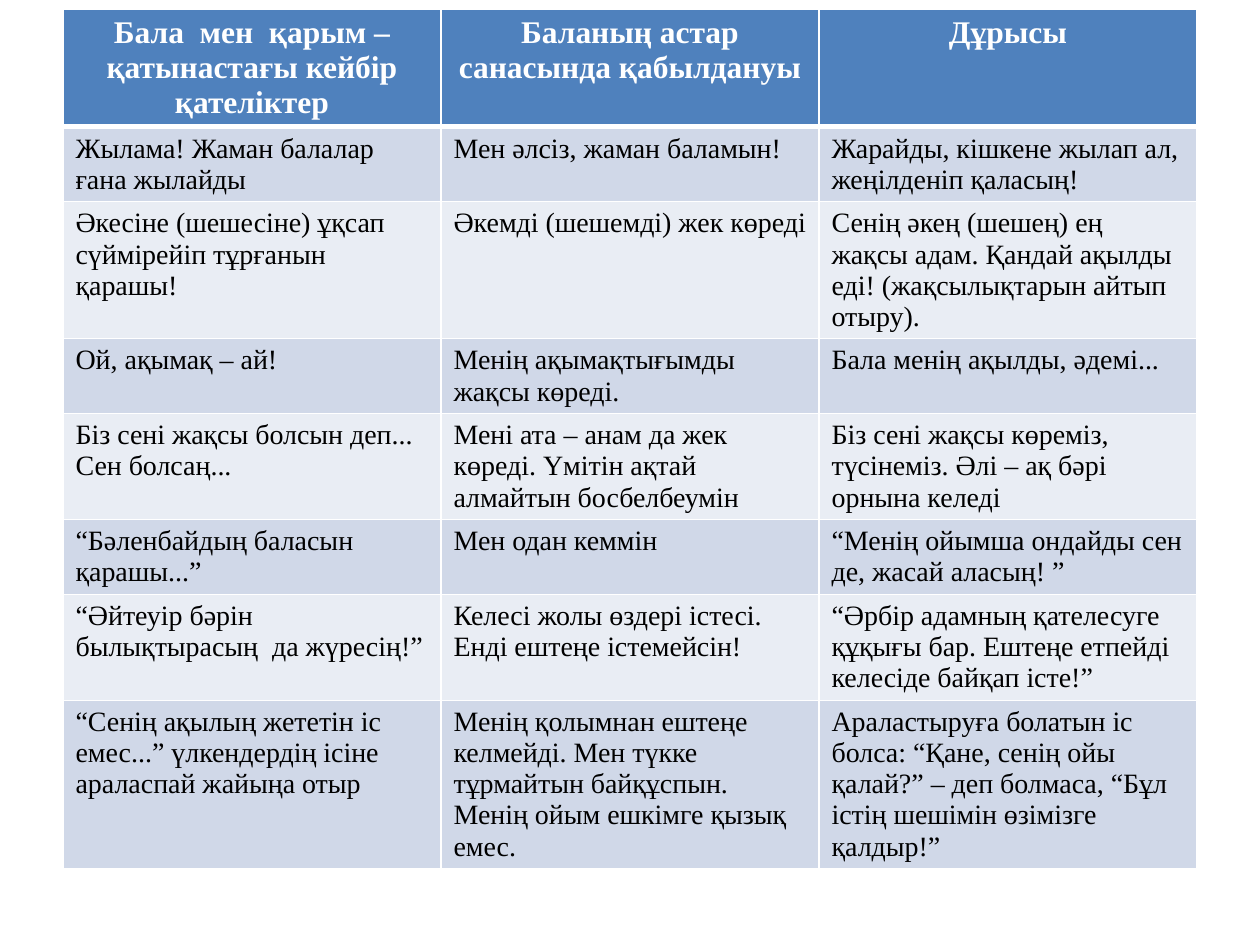
from lxml import etree
from pptx import Presentation
from pptx import util as u
from pptx.dml import color
from pptx.enum import text
from pptx.oxml import ns

HEADINGS = [
    "Бала  мен  қарым – қатынастағы кейбір қателіктер",
    "Баланың астар санасында қабылдануы",
    "Дұрысы",
]
EXAMPLES = [
    ["Жылама! Жаман балалар ғана жылайды",
     "Мен әлсіз, жаман баламын!",
     "Жарайды, кішкене жылап ал, жеңілденіп қаласың!"],
    ["Әкесіне (шешесіне) ұқсап сүймірейіп тұрғанын қарашы!",
     "Әкемді (шешемді) жек көреді",
     "Сенің әкең (шешең) ең жақсы адам. Қандай ақылды еді! (жақсылықтарын айтып отыру)."],
    ["Ой, ақымақ – ай!",
     "Менің ақымақтығымды жақсы көреді.",
     "Бала менің ақылды, әдемі..."],
    ["Біз сені жақсы болсын деп...\nСен болсаң...",
     "Мені ата – анам да жек көреді. Үмітін ақтай алмайтын босбелбеумін",
     "Біз сені жақсы көреміз, түсінеміз. Әлі – ақ бәрі орнына келеді"],
    ["“Бәленбайдың баласын қарашы...”",
     "Мен одан кеммін",
     "“Менің ойымша ондайды сен де, жасай аласың! ”"],
    ["“Әйтеуір бәрін былықтырасың  да жүресің!”",
     "Келесі жолы өздері істесі. Енді ештеңе істемейсін!",
     "“Әрбір адамның қателесуге құқығы бар. Ештеңе етпейді келесіде байқап істе!”"],
    ["“Сенің ақылың жететін іс емес...” үлкендердің ісіне араласпай жайыңа отыр",
     "Менің қолымнан ештеңе келмейді. Мен түкке тұрмайтын байқұспын.\n"
     "Менің ойым ешкімге қызық емес.",
     "Араластыруға болатын іс болса: “Қане, сенің ойы қалай?” – деп болмаса, "
     "“Бұл істің шешімін өзімізге қалдыр!”"],
]


def rgb(value):
    return color.RGBColor.from_string(value)


class SlideBuilder:
    """Holds the style and the current slide, and adds elements to it."""

    font = "Times New Roman"
    white, black = "FFFFFF", "000000"
    header_fill = "4F81BD"
    band_fills = ("D0D8E8", "E9EDF4")

    def __init__(self, presentation):
        self.width = presentation.slide_width
        self.height = presentation.slide_height
        self.slide = presentation.slides.add_slide(presentation.slide_layouts[6])

    def border(self, cell, side, points):
        properties = cell._tc.get_or_add_tcPr()
        line = etree.SubElement(properties, ns.qn(f"a:ln{side}"), w=str(u.Pt(points)))
        fill = etree.SubElement(line, ns.qn("a:solidFill"))
        etree.SubElement(fill, ns.qn("a:srgbClr"), val=self.white)

    def cell(self, cell, content, fill, header, below_header):
        for side in "LRTB":
            thick = (header and side == "B") or (below_header and side == "T")
            self.border(cell, side, 3 if thick else 1)
        cell.fill.solid()
        cell.fill.fore_color.rgb = rgb(fill)
        cell.text_frame.text = content
        for paragraph in cell.text_frame.paragraphs:
            paragraph.alignment = text.PP_ALIGN.CENTER if header else text.PP_ALIGN.LEFT
            for run in paragraph.runs:
                run.font.name = self.font
                run.font.size = u.Pt(18 if header else 16)
                run.font.bold = header
                run.font.color.rgb = rgb(self.white if header else self.black)

    def table(self, rows, left, top, width, header_height, row_height):
        heights = [u.Inches(header_height)] + [u.Inches(row_height)] * (len(rows) - 1)
        frame = self.slide.shapes.add_table(
            len(rows), len(rows[0]), int(left * self.width), int(top * self.height),
            int(width * self.width), sum(heights))
        for index, (contents, height) in enumerate(zip(rows, heights)):
            frame.table.rows[index].height = height
            fill = self.band_fills[(index - 1) % 2] if index else self.header_fill
            for column, content in enumerate(contents):
                self.cell(frame.table.cell(index, column), content, fill,
                          index == 0, index == 1)


def main():
    presentation = Presentation()
    presentation.slide_width = u.Inches(10)
    presentation.slide_height = u.Inches(7.5)
    builder = SlideBuilder(presentation)
    builder.table([HEADINGS, *EXAMPLES], left=0.05, top=0.01, width=0.9,
                  header_height=0.92, row_height=0.58)
    presentation.save("out.pptx")


if __name__ == "__main__":
    main()
